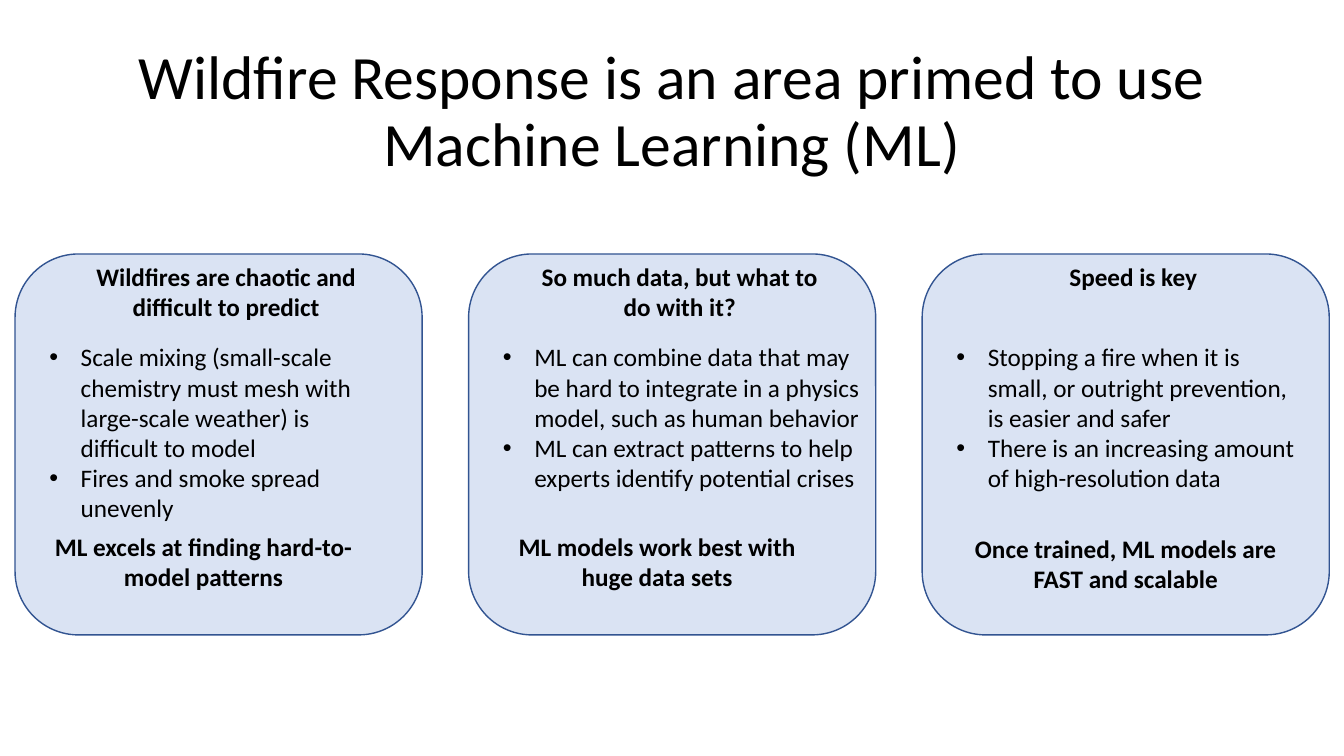
import pptx
import pptx.dml.color
import pptx.enum.shapes
import pptx.enum.text
import pptx.oxml
import pptx.oxml.ns
import pptx.util

Cm = pptx.util.Cm
ALIGN = pptx.enum.text.PP_ALIGN
ANCHOR = pptx.enum.text.MSO_ANCHOR

BLACK = pptx.dml.color.RGBColor(0x00, 0x00, 0x00)
CARD_FILL = pptx.dml.color.RGBColor(0xDA, 0xE3, 0xF3)
CARD_LINE = pptx.dml.color.RGBColor(0x32, 0x54, 0x91)

CARD_LEFT, CARD_TOP, CARD_PITCH = 0.38, 6.4, 11.43
CARD_WIDTH, CARD_HEIGHT = 10.26, 9.6
LABEL_WIDTH, LABEL_HEIGHT = 8.28, 1.8
LIST_HEIGHT = 4.88
BULLET_INDENT = Cm(0.79)

# Offsets are in centimetres from the corner of the card
CARDS = [
    {"heading": "Wildfires are chaotic and difficult to predict",
     "points": ["Scale mixing (small-scale chemistry must mesh with large-scale "
                "weather) is difficult to model",
                "Fires and smoke spread unevenly"],
     "conclusion": "ML excels at finding hard-to-model patterns",
     "list_width": 9.04, "conclusion_offset": (0.61, 6.86)},
    {"heading": "So much data, but what to do with it?",
     "points": ["ML can combine data that may be hard to integrate in a physics "
                "model, such as human behavior",
                "ML can extract patterns to help experts identify potential crises"],
     "conclusion": "ML models work best with huge data sets",
     "list_width": 9.8, "conclusion_offset": (0.61, 6.86)},
    {"heading": "Speed is key",
     "points": ["Stopping a fire when it is small, or outright prevention, "
                "is easier and safer",
                "There is an increasing amount of high-resolution data"],
     "conclusion": "Once trained, ML models are FAST and scalable",
     "list_width": 9.04, "conclusion_offset": (0.99, 6.91)},
]


def add_bullet(paragraph):
    properties = paragraph._p.get_or_add_pPr()
    properties.set("marL", str(BULLET_INDENT))
    properties.set("indent", str(-BULLET_INDENT))
    for tag, name, value in (("buFont", "typeface", "Arial"), ("buChar", "char", "•")):
        properties.append(pptx.oxml.parse_xml(
            f'<a:{tag} {pptx.oxml.ns.nsdecls("a")} {name}="{value}"/>'))


def write_text(frame, paragraphs, size=18, bold=False, align=ALIGN.LEFT,
               anchor=ANCHOR.TOP, line_spacing=1.0, bullets=False):
    frame.word_wrap = True
    frame.auto_size = pptx.enum.text.MSO_AUTO_SIZE.NONE
    frame.vertical_anchor = anchor
    for index, text in enumerate(paragraphs):
        paragraph = frame.add_paragraph() if index else frame.paragraphs[0]
        if bullets:
            add_bullet(paragraph)
        paragraph.alignment = align
        paragraph.line_spacing = line_spacing
        paragraph.space_before = pptx.util.Pt(0)
        run = paragraph.add_run()
        run.text = text
        run.font.name = "Calibri"
        run.font.size = pptx.util.Pt(size)
        run.font.bold = bold
        run.font.color.rgb = BLACK


def place(shape, left, top, width, height):
    shape.left, shape.top = Cm(left), Cm(top)
    shape.width, shape.height = Cm(width), Cm(height)


def add_label(slide, text, left, top):
    label = slide.shapes.add_textbox(Cm(left), Cm(top), Cm(LABEL_WIDTH), Cm(LABEL_HEIGHT))
    write_text(label.text_frame, [text], bold=True, align=ALIGN.CENTER)


def build_title(slide, left, top, width, height):
    title = slide.shapes.title
    place(title, left, top, width, height)
    write_text(title.text_frame, ["Wildfire Response is an area primed to use Machine Learning (ML)"],
               size=44, align=ALIGN.CENTER, anchor=ANCHOR.MIDDLE, line_spacing=0.9)


def build_card(slide, content, point_list, left, top, width, height):
    # Rounded panel
    panel = slide.shapes.add_shape(pptx.enum.shapes.MSO_SHAPE.ROUNDED_RECTANGLE,
                                   Cm(left), Cm(top), Cm(width), Cm(height))
    panel.shadow.inherit = False
    panel.fill.solid()
    panel.fill.fore_color.rgb = CARD_FILL
    panel.line.color.rgb = CARD_LINE
    panel.line.width = pptx.util.Pt(1)

    # Bulleted points, stacked in front of the panel
    panel.element.addnext(point_list.element)
    place(point_list, left + 0.61, top + 2.08, content["list_width"], LIST_HEIGHT)
    write_text(point_list.text_frame, content["points"], bullets=True)

    # Heading and conclusion
    add_label(slide, content["heading"], left + 1.18, top + 0.05)
    dx, dy = content["conclusion_offset"]
    add_label(slide, content["conclusion"], left + dx, top + dy)


def main():
    presentation = pptx.Presentation()
    presentation.slide_width, presentation.slide_height = Cm(33.87), Cm(19.05)
    # The comparison layout holds a title and four bodies; three are used
    slide = presentation.slides.add_slide(presentation.slide_layouts[4])
    *point_lists, spare_body = list(slide.placeholders)[1:]
    spare_body.element.getparent().remove(spare_body.element)

    build_title(slide, 2.33, 1.01, 29.21, 3.68)
    for column, (content, point_list) in enumerate(zip(CARDS, point_lists)):
        build_card(slide, content, point_list, CARD_LEFT + column * CARD_PITCH,
                   CARD_TOP, CARD_WIDTH, CARD_HEIGHT)
    presentation.save("out.pptx")


if __name__ == "__main__":
    main()
